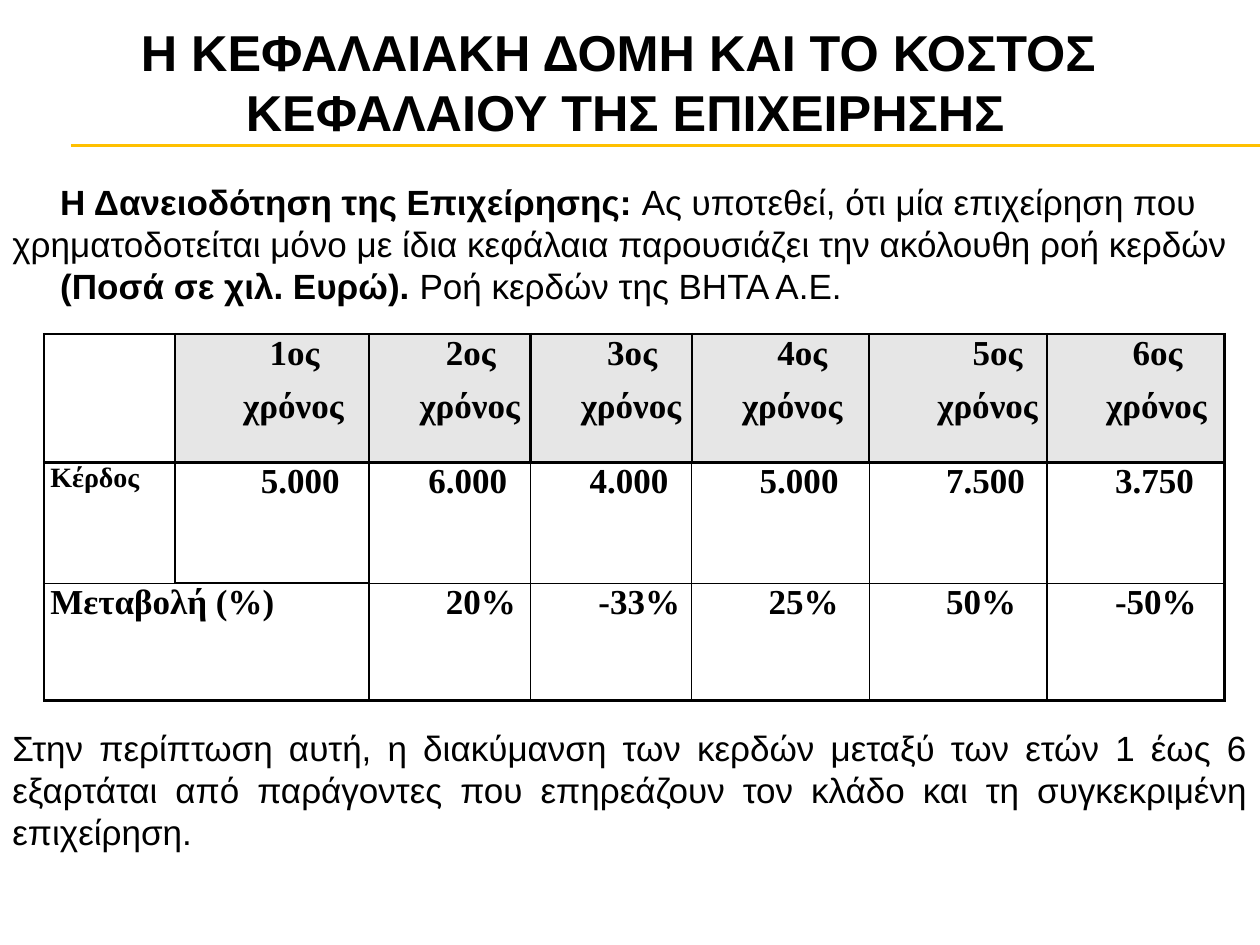
"""Build the slide on capital structure and the cost of capital."""
from dataclasses import dataclass
from typing import Optional

from lxml.etree import SubElement
from pptx import Presentation
from pptx.dml.color import RGBColor
from pptx.enum.shapes import MSO_CONNECTOR
from pptx.enum.text import MSO_ANCHOR, PP_ALIGN
from pptx.oxml.ns import qn
from pptx.util import Inches, Pt


@dataclass(frozen=True)
class Theme:
    ink: str = "000000"
    rule: str = "FFC000"
    header: str = "E6E6E6"
    sans: str = "Arial"
    serif: str = "Times New Roman"
    title: float = 28.8
    body: float = 20
    label: float = 16
    thick: float = 1.5
    thin: float = 1
    rule_width: float = 0.75


@dataclass(frozen=True)
class Run:
    text: str
    bold: bool = False
    size: float = Theme.body
    font: str = Theme.sans


@dataclass(frozen=True)
class Line:
    runs: tuple[Run, ...]
    indent: float = 0
    first: float = 0
    before: float = 0
    after: float = 0
    align: PP_ALIGN = PP_ALIGN.LEFT


@dataclass(frozen=True)
class TextBlock:
    box: tuple[float, float, float, float]
    lines: tuple[Line, ...]
    anchor: MSO_ANCHOR = MSO_ANCHOR.TOP
    top: float = 0.05


@dataclass(frozen=True)
class Cell:
    lines: tuple[Line, ...] = ()
    fill: Optional[str] = None


THEME = Theme()
STEP = 0.07
COLUMNS = (1.04, 1.54, 1.28, 1.28, 1.41, 1.41, 1.41)
ROWS = (1.02, 0.96, 0.93)
YEAR_STEPS = ((10, 7), (8, 5), (8, 5), (9, 5), (11, 7), (9, 6))
PROFITS = (("5.000", 9), ("6.000", 6), ("4.000", 6), ("5.000", 7), ("7.500", 8), ("3.750", 7))
CHANGES = (("20%", 8), ("-33%", 7), ("25%", 8), ("50%", 8), ("-50%", 7))

TEXTS = (
    TextBlock(
        (0.2, 0.21, 9.53, 0.87),
        (Line((Run("Η ΚΕΦΑΛΑΙΑΚΗ ΔΟΜΗ ΚΑΙ ΤΟ ΚΟΣΤΟΣ \vΚΕΦΑΛΑΙΟΥ ΤΗΣ ΕΠΙΧΕΙΡΗΣΗΣ", True, THEME.title),),
              align=PP_ALIGN.CENTER),),
        MSO_ANCHOR.MIDDLE,
    ),
    TextBlock(
        (0, 1.23, 10, 1.75),
        (
            Line((Run("Η Δανειοδότηση της Επιχείρησης: ", True),
                  Run("Ας υποτεθεί, ότι μία επιχείρηση που χρηματοδοτείται μόνο με ίδια κεφάλαια "
                      "παρουσιάζει την ακόλουθη ροή κερδών")), first=0.38),
            Line((Run("(Ποσά σε χιλ. Ευρώ). ", True), Run("Ροή κερδών της ΒΗΤΑ Α.Ε.")), first=0.38),
        ),
        top=0.2,
    ),
    TextBlock(
        (0, 5.72, 10, 1.11),
        (Line((Run("Στην περίπτωση αυτή, η διακύμανση των κερδών μεταξύ των ετών 1 έως 6 εξαρτάται "
                   "από παράγοντες που επηρεάζουν τον κλάδο και τη συγκεκριμένη επιχείρηση."),),
              align=PP_ALIGN.JUSTIFY),),
    ),
)


def write_lines(frame, lines: tuple[Line, ...]) -> None:
    """Write formatted paragraphs into a text frame."""
    for index, line in enumerate(lines):
        paragraph = frame.paragraphs[0] if index == 0 else frame.add_paragraph()
        formats = {"alignment": line.align, "space_before": Pt(line.before), "space_after": Pt(line.after)}
        for name, value in formats.items():
            setattr(paragraph, name, value)
        properties = paragraph._p.get_or_add_pPr()
        properties.set("marL", str(Inches(line.indent)))
        properties.set("indent", str(Inches(line.first)))
        for part in line.runs:
            pieces = part.text.split("\v")
            for position, piece in enumerate(pieces):
                if position:
                    paragraph.add_line_break()
                run = paragraph.add_run()
                run.text = piece
                for name, value in {"name": part.font, "size": Pt(part.size), "bold": part.bold}.items():
                    setattr(run.font, name, value)
                run.font.color.rgb = RGBColor.from_string(THEME.ink)


def add_text(slide, block: TextBlock) -> None:
    """Add one text box."""
    frame = slide.shapes.add_textbox(*map(Inches, block.box)).text_frame
    formats = {"word_wrap": True, "vertical_anchor": block.anchor, "margin_top": Inches(block.top)}
    for name, value in formats.items():
        setattr(frame, name, value)
    write_lines(frame, block.lines)


def add_rule(slide, y: float) -> None:
    """Add a horizontal rule below the title."""
    connector = slide.shapes.add_connector(
        MSO_CONNECTOR.STRAIGHT, Inches(0.56), Inches(y), Inches(10), Inches(y))
    connector.line.color.rgb = RGBColor.from_string(THEME.rule)
    connector.line.width = Pt(THEME.rule_width)
    SubElement(connector._element.spPr, qn("a:effectLst"))


def figure(text: str, steps: int = 0, size: float = THEME.body) -> Cell:
    """Return a body cell indented by a number of steps."""
    return Cell((Line((Run(text, True, size, THEME.serif),), steps * STEP, before=12),))


def year(number: int, steps: tuple[int, int]) -> Cell:
    """Return a two-line header cell for a year."""
    lines = tuple(Line((Run(text, True, font=THEME.serif),), step * STEP, before=4, after=4)
                  for text, step in zip((f"{number}ος", "χρόνος"), steps))
    return Cell(lines, THEME.header)


def border_widths(row: int, column: int) -> dict[str, float]:
    """Return the border widths of a cell by side."""
    last_row, last_column = len(ROWS) - 1, len(COLUMNS) - 1
    thick = {
        "L": row == 0 or column <= 1 and row == 1 or column == 0 or row == 2 and column == 2,
        "R": row == 0 or column == last_column or column == 0 or row == 2 and column == 1,
        "T": row <= 1,
        "B": row in (0, last_row) or (row, column) == (1, 1),
    }
    return {side: THEME.thick if is_thick else THEME.thin for side, is_thick in thick.items()}


def add_border(cell, side: str, width: float) -> None:
    """Draw one side of a table cell."""
    line = SubElement(cell._tc.get_or_add_tcPr(), qn(f"a:ln{side}"), w=str(Pt(width)))
    SubElement(SubElement(line, qn("a:solidFill")), qn("a:srgbClr"), val=THEME.ink)


def add_profit_table(slide) -> None:
    """Add the table of yearly profits and changes."""
    content = (
        (Cell(), *(year(number, steps) for number, steps in enumerate(YEAR_STEPS, 1))),
        (figure("Κέρδος", size=THEME.label), *(figure(*profit) for profit in PROFITS)),
        (figure("Μεταβολή (%)"), Cell(), *(figure(*change) for change in CHANGES)),
    )
    table = slide.shapes.add_table(
        len(ROWS), len(COLUMNS), Inches(0.35), Inches(2.65), Inches(sum(COLUMNS)), Inches(sum(ROWS))).table
    table.first_row = table.horz_banding = False
    for column, width in zip(table.columns, COLUMNS):
        column.width = Inches(width)
    for row, height in zip(table.rows, ROWS):
        row.height = Inches(height)
    table.cell(2, 0).merge(table.cell(2, 1))
    margins = {"margin_left": 0.05, "margin_right": 0.05, "margin_top": 0, "margin_bottom": 0}
    for row, items in enumerate(content):
        for column, item in enumerate(items):
            cell = table.cell(row, column)
            for name, value in margins.items():
                setattr(cell, name, Inches(value))
            for side, width in border_widths(row, column).items():
                add_border(cell, side, width)
            if item.fill:
                cell.fill.solid()
                cell.fill.fore_color.rgb = RGBColor.from_string(item.fill)
            else:
                cell.fill.background()
            write_lines(cell.text_frame, item.lines)


def main() -> None:
    """Build and save the presentation."""
    presentation = Presentation()
    presentation.slide_width, presentation.slide_height = Inches(10), Inches(7.5)
    slide = presentation.slides.add_slide(presentation.slide_layouts[6])
    for y in (1.15, 1.16):
        add_rule(slide, y)
    add_profit_table(slide)
    for block in TEXTS:
        add_text(slide, block)
    presentation.save("out.pptx")


if __name__ == "__main__":
    main()
